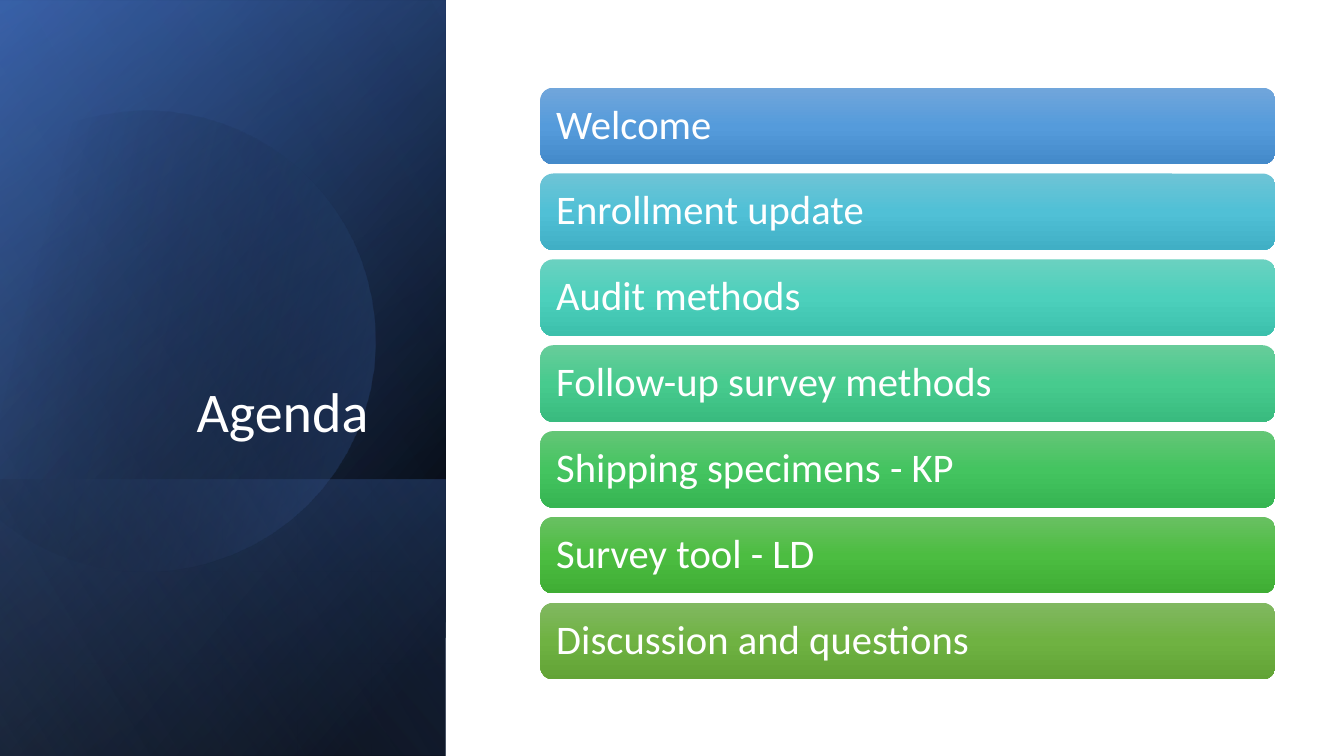
import math

from lxml import etree
from pptx import Presentation
from pptx.dml.color import RGBColor
from pptx.enum.shapes import MSO_SHAPE
from pptx.enum.text import MSO_ANCHOR, MSO_AUTO_SIZE, PP_ALIGN
from pptx.oxml.ns import qn
from pptx.util import Inches, Pt

RECT, ROUNDED = MSO_SHAPE.RECTANGLE, MSO_SHAPE.ROUNDED_RECTANGLE
LEFT, RIGHT = PP_ALIGN.LEFT, PP_ALIGN.RIGHT
MIDDLE, BOTTOM = MSO_ANCHOR.MIDDLE, MSO_ANCHOR.BOTTOM
NO_AUTOFIT = MSO_AUTO_SIZE.NONE

COLORS = {"white": "FFFFFF", "black": "000000", "navy": "2F5597",
          "blue": "4472C4", "pale": "8FAADC"}


def paint(shape, stops, angle):
    """Fill with a linear gradient of (position %, hex, opacity %) stops; no line or shadow."""
    shape.shadow.inherit = False
    shape.line.fill.background()
    grad = etree.Element(qn("a:gradFill"), rotWithShape="1")
    gs_list = etree.SubElement(grad, qn("a:gsLst"))
    for pos, color, opacity in stops:
        gs = etree.SubElement(gs_list, qn("a:gs"), pos=str(pos * 1000))
        clr = etree.SubElement(gs, qn("a:srgbClr"), val=color)
        if opacity < 100:
            etree.SubElement(clr, qn("a:alpha"), val=str(opacity * 1000))
    etree.SubElement(grad, qn("a:lin"), ang=str(angle * 60000), scaled="0")
    shape.element.spPr[1].addnext(grad)


def write_text(shape, text, size, align=LEFT, anchor=MIDDLE, inset=0.1, inset_y=0.05):
    tf = shape.text_frame
    tf.word_wrap = True
    tf.auto_size = NO_AUTOFIT
    tf.vertical_anchor = anchor
    tf.margin_left = tf.margin_right = Inches(inset)
    tf.margin_top = tf.margin_bottom = Inches(inset_y)
    p = tf.paragraphs[0]
    p.alignment = align
    p.line_spacing = 0.9
    r = p.add_run()
    r.text = text
    r.font.size = Pt(size)
    r.font.name = "Calibri"
    r.font.color.rgb = RGBColor.from_string(COLORS["white"])


prs = Presentation()
prs.slide_width, prs.slide_height = Inches(13.33), Inches(7.5)
s = prs.slides.add_slide(prs.slide_layouts[5])

# Left panel: rectangles turned a quarter, with the disc below the last one
black, navy, blue, pale = (COLORS[n] for n in ("black", "navy", "blue", "pale"))
panels = [
    (-1.54, 1.54, 7.5, [(8, black, 100), (100, navy, 100)], 50),
    (-1.54, 1.55, 7.5, [(0, black, 0), (99, blue, 46)], 30),
    (0.84, 3.92, 2.74, [(2, blue, 29), (100, black, 30)], 130),
    (-1.54, 1.54, 7.5, [(0, black, 0), (99, pale, 11)], 120),
]
for x, y, w, stops, angle in panels:
    panel = s.shapes.add_shape(RECT, Inches(x), Inches(y), Inches(w), Inches(4.42))
    panel.rotation = 90
    panel.element.spPr.find(qn("a:xfrm")).set("flipH", "1")
    paint(panel, stops, angle)

# Disc outline: Bezier segments as (control, control, end), None for a straight line
DISC_ROTATION, CX, CY = 343.9, 1.59, 3.35
segments = [
    ((2.46, 1.12), (3.35, 1.77), (3.63, 2.75)),
    ((3.98, 3.97), (3.28, 5.23), (2.07, 5.58)),
    ((1.31, 5.8), (0.53, 5.61), (-0.03, 5.14)),
    (None, None, (-0.15, 5.03)),
    (None, None, (-0.15, 1.75)),
    (None, None, (0, 1.61)),
    ((0.23, 1.42), (0.5, 1.28), (0.8, 1.19)),
    ((1.03, 1.13), (1.26, 1.1), (1.49, 1.1)),
]
STEPS = 16
outline = [(1.49, 1.1)]
for c1, c2, end in segments:
    if c1 is None:
        outline.append(end)
        continue
    start = outline[-1]
    for t in (i / STEPS for i in range(1, STEPS + 1)):
        u = 1 - t
        outline.append(tuple(u**3 * a + 3 * u * u * t * b + 3 * u * t * t * c + t**3 * d
                             for a, b, c, d in zip(start, c1, c2, end)))
turn = math.radians(-DISC_ROTATION)
cos, sin = math.cos(turn), math.sin(turn)
unrotated = [(Inches(CX + (x - CX) * cos - (y - CY) * sin),
              Inches(CY + (x - CX) * sin + (y - CY) * cos)) for x, y in outline]
builder = s.shapes.build_freeform(*unrotated[0])
builder.add_line_segments(unrotated[1:], close=True)
disc = builder.convert_to_shape()
disc.rotation = DISC_ROTATION
paint(disc, [(29, black, 0), (100, blue, 43)], 30)
panel.element.addprevious(disc.element)

# Title, brought in front of the panel
title = s.shapes.title
title.left, title.top, title.width, title.height = map(Inches, (0.64, 1.84, 3.41, 2.62))
write_text(title, "Agenda\t", size=40, align=RIGHT, anchor=BOTTOM)
panel.element.addnext(title.element)

# Agenda bars
agenda = [
    ("Welcome", "71A6DB", "559BDB", "448ACA"),
    ("Enrollment update", "6EC4D6", "50C0D6", "40AFC5"),
    ("Audit methods", "6AD1C0", "4CD0BC", "3CC0AC"),
    ("Follow-up survey methods", "67CC9A", "47CB8E", "39BB7F"),
    ("Shipping specimens - KP", "64C677", "44C460", "36B552"),
    ("Survey tool - LD", "69C062", "4CBD41", "3FAD34"),
    ("Discussion and questions", "81B861", "6FB242", "62A336"),
]
FIRST_TOP, LAST_TOP = 0.87, 5.98
pitch = (LAST_TOP - FIRST_TOP) / (len(agenda) - 1)
for i, (item, *shades) in enumerate(agenda):
    bar = s.shapes.add_shape(ROUNDED, Inches(5.36), Inches(FIRST_TOP + i * pitch),
                             Inches(7.29), Inches(0.76))
    paint(bar, [(pos, shade, 100) for pos, shade in zip((0, 50, 100), shades)], 90)
    write_text(bar, item, size=29, inset=0.12, inset_y=0.12)

prs.save("out.pptx")
